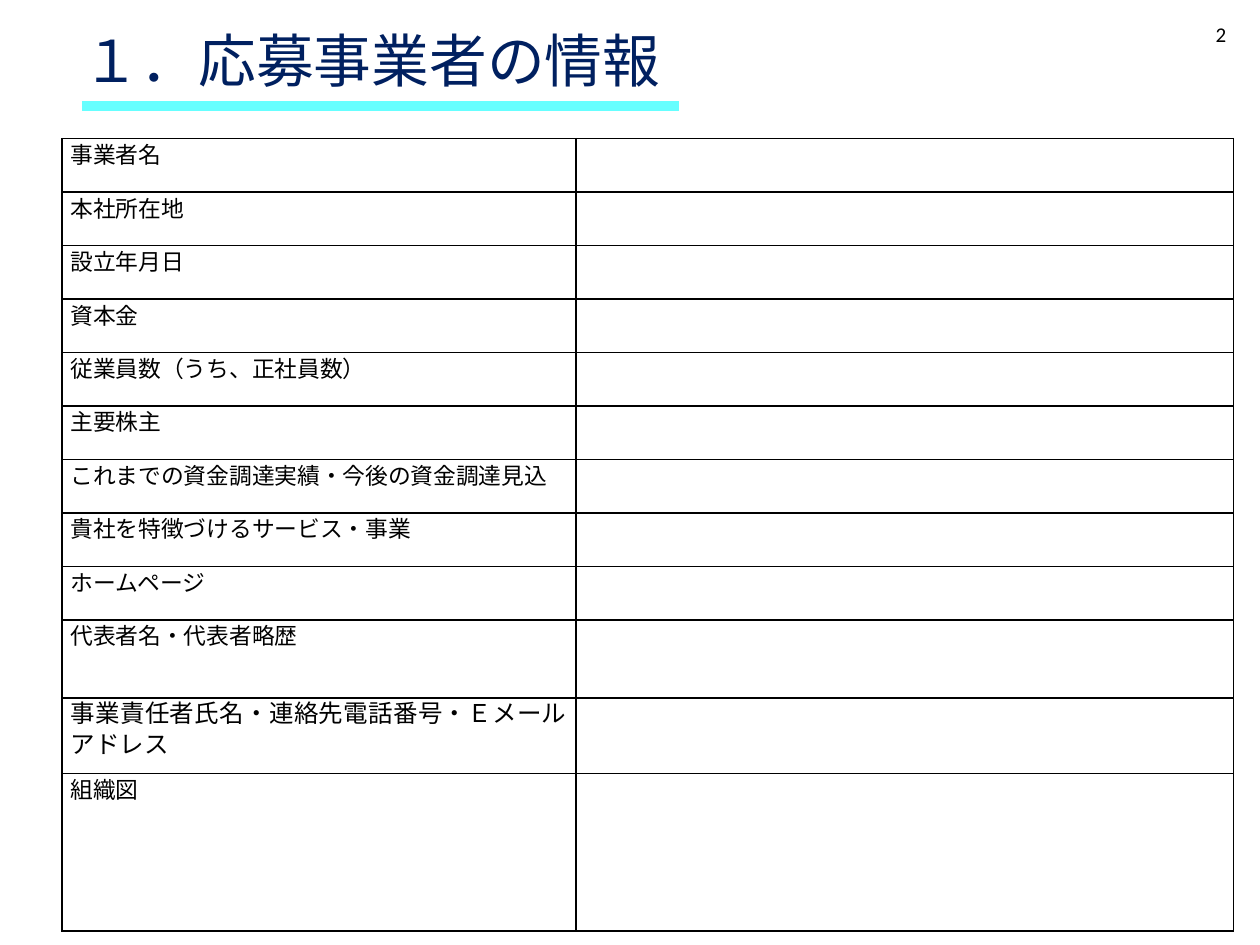
from lxml import etree
from pptx import Presentation
from pptx.dml.color import RGBColor
from pptx.enum.lang import MSO_LANGUAGE_ID
from pptx.enum.shapes import MSO_CONNECTOR
from pptx.enum.text import MSO_ANCHOR, PP_ALIGN
from pptx.oxml.ns import qn
from pptx.util import Inches, Pt

TOP = MSO_ANCHOR.TOP
LEFT, RIGHT, JUST = PP_ALIGN.LEFT, PP_ALIGN.RIGHT, PP_ALIGN.JUSTIFY
STRAIGHT = MSO_CONNECTOR.STRAIGHT
JAPAN = MSO_LANGUAGE_ID.JAPANESE
COLS, ROWS = 100, 75
SIDES = ("a:lnL", "a:lnR", "a:lnT", "a:lnB")

ITEMS = [
    ("事業者名", LEFT, True, 13),
    ("本社所在地", LEFT, True, 13),
    ("設立年月日", JUST, True, 13),
    ("資本金", JUST, True, 13),
    ("従業員数（うち、正社員数）", JUST, True, 13),
    ("主要株主", JUST, True, 13),
    ("これまでの資金調達実績・今後の資金調達見込", LEFT, False, 13),
    ("貴社を特徴づけるサービス・事業", LEFT, True, 13),
    ("ホームページ", JUST, True, 13),
    ("代表者名・代表者略歴", JUST, True, 13),
    ("事業責任者氏名・連絡先電話番号・Ｅメールアドレス", JUST, False, 14),
    ("組織図", JUST, True, 13),
]


def hue(code):
    return RGBColor.from_string(code)


def put(item, values):
    for name, value in values.items():
        setattr(item, name, value)


class Deck:
    """Holds the style and the current slide, and adds elements on a grid."""

    sans, asian = "Calibri", "Noto Sans CJK JP"
    ink, navy, aqua, white = "000000", "002060", "66FFFF", "FFFFFF"

    def __init__(self):
        self.prs = Presentation()
        put(self.prs, {"slide_width": Inches(10), "slide_height": Inches(7.5)})
        self.slide = self.prs.slides.add_slide(self.prs.slide_layouts[6])

    def x(self, cols):
        return round(self.prs.slide_width * cols / COLS)

    def y(self, rows):
        return round(self.prs.slide_height * rows / ROWS)

    def area(self, left, top, width, height):
        return self.x(left), self.y(top), self.x(width), self.y(height)

    def text(self, para, words, size, color, face, **form):
        put(para, form)
        run = para.add_run()
        run.text = words
        run.font.color.rgb = hue(color)
        put(run.font, {"size": Pt(size), "name": face, "language_id": JAPAN})
        etree.SubElement(run._r.get_or_add_rPr(), qn("a:ea"), typeface=self.asian)

    def label(self, box, words, size, color, inset, **form):
        frame = self.slide.shapes.add_textbox(*self.area(*box)).text_frame
        put(frame, {"word_wrap": True, "vertical_anchor": TOP,
                    "margin_top": self.y(inset)})
        self.text(frame.paragraphs[0], words, size, color, self.sans, **form)

    def rule(self, left, right, row, color, width):
        line = self.slide.shapes.add_connector(
            STRAIGHT, self.x(left), self.y(row), self.x(right), self.y(row))
        line.line.color.rgb = hue(color)
        line.line.width = Pt(width)
        etree.SubElement(line._element.spPr, qn("a:effectLst"))

    def edge(self, cell):
        props = cell._tc.get_or_add_tcPr()
        for spot, side in enumerate(SIDES):
            line = etree.Element(qn(side), w=str(Pt(1)))
            fill = etree.SubElement(line, qn("a:solidFill"))
            etree.SubElement(fill, qn("a:srgbClr"), val=self.ink)
            props.insert(spot, line)

    def table(self, left, top, widths, heights, items):
        box = self.area(left, top, sum(widths), sum(heights))
        grid = self.slide.shapes.add_table(len(heights), len(widths), *box).table
        put(grid, {"first_row": False, "horz_banding": False})
        for col, width in zip(grid.columns, widths):
            col.width = self.x(width)
        for row, height in zip(grid.rows, heights):
            row.height = self.y(height)
        for cell in grid.iter_cells():
            put(cell, {"margin_left": self.x(0.7), "margin_right": self.x(0.7),
                       "margin_top": 0, "margin_bottom": 0})
            cell.fill.solid()
            cell.fill.fore_color.rgb = hue(self.white)
            self.edge(cell)
        for row, (words, align, hang, size) in enumerate(items):
            para = grid.cell(row, 0).text_frame.paragraphs[0]
            self.text(para, words, size, self.ink, self.asian,
                      alignment=align, line_spacing=Pt(18))
            if hang:
                props = para._p.get_or_add_pPr()
                props.set("marL", str(self.x(1.5)))
                props.set("indent", str(-self.x(1.5)))


def main():
    deck = Deck()
    deck.label((5.6, 2.6, 86.1, 8.4), "１．応募事業者の情報", 33, deck.navy, 0,
               line_spacing=0.9)
    deck.rule(6.5, 53.9, 8.4, deck.aqua, 6)
    deck.label((75.8, 1.2, 22.5, 4), "2", 12, deck.ink, 0.5, alignment=RIGHT)
    tall = [6.2, 6, 12.5]
    short = len(ITEMS) - len(tall)
    heights = [(62.9 - sum(tall)) / short] * short + tall
    deck.table(4.9, 11, [40.8, 52.2], heights, ITEMS)
    deck.prs.save("out.pptx")


if __name__ == "__main__":
    main()
